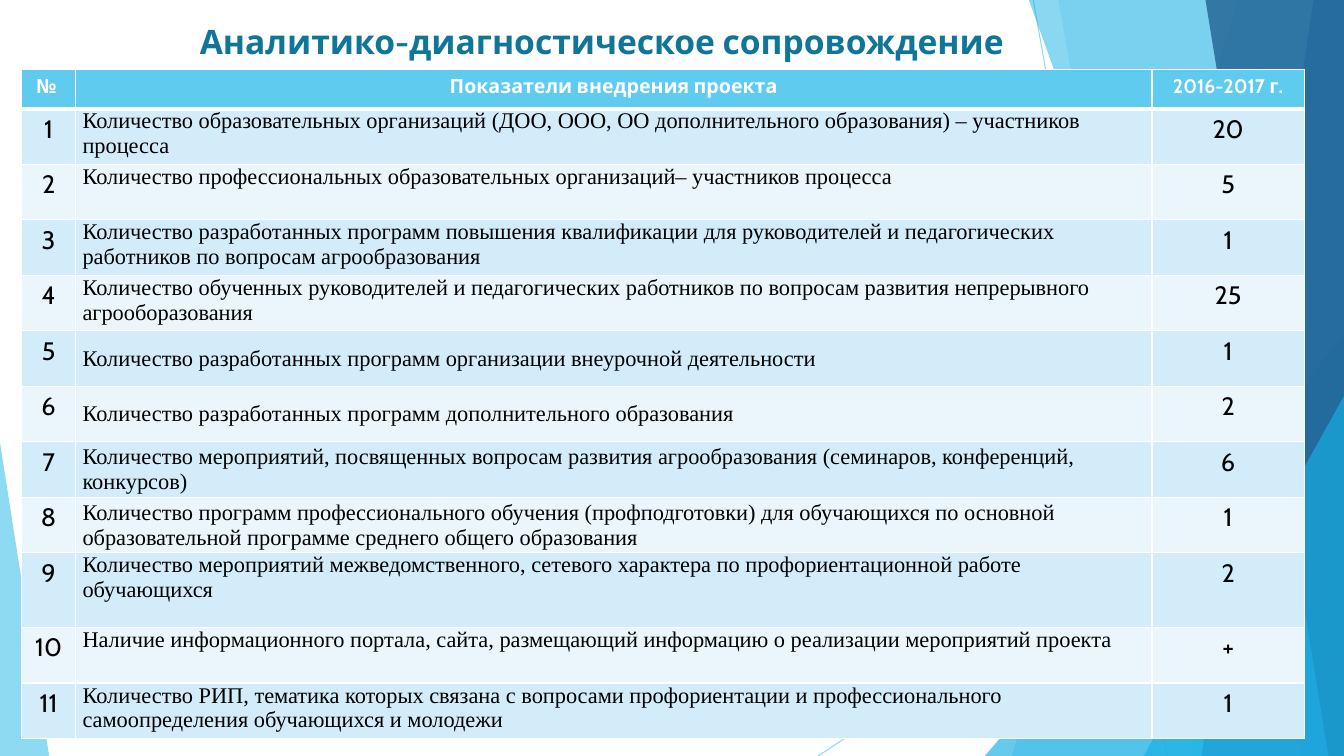
import pptx
import pptx.dml.color
import pptx.enum.dml
import pptx.enum.shapes
import pptx.enum.text
import pptx.oxml
import pptx.oxml.ns
import pptx.util

Cm = pptx.util.Cm
Color = pptx.dml.color.RGBColor
Align = pptx.enum.text.PP_ALIGN
Anchor = pptx.enum.text.MSO_ANCHOR

WHITE = Color(0xFF, 0xFF, 0xFF)
BLACK = Color(0x00, 0x00, 0x00)
SKY = Color(0x5F, 0xCB, 0xEF)
CYAN = Color(0x17, 0xB0, 0xE4)
BLUE = Color(0x2E, 0x83, 0xC3)
NAVY = Color(0x22, 0x62, 0x92)
TEAL = Color(0x0F, 0x76, 0x98)
BAND_DARK = Color(0xD2, 0xEC, 0xF9)
BAND_LIGHT = Color(0xEA, 0xF6, 0xFC)

SLIDE_WIDTH, SLIDE_HEIGHT = 33.87, 19.05
COLUMN_WIDTHS = (1.35, 27.13, 3.84)
HEADER_HEIGHT, ROW_HEIGHT, TALL_ROW_HEIGHT = 0.99, 1.4, 1.88
TALL_ROW = 9
MIDDLE_ROWS = (5, 6, 7, 8)
HEADINGS = ("№ ", "Показатели внедрения проекта", "2016-2017 г.")
INDICATORS = (
    ("Количество образовательных организаций (ДОО, ООО, ОО дополнительного образования) – участников процесса", "20"),
    ("Количество профессиональных образовательных организаций– участников процесса", "5"),
    ("Количество разработанных программ повышения квалификации для руководителей и педагогических "
     "работников по вопросам агрообразования", "1"),
    ("Количество обученных руководителей и педагогических работников по вопросам развития непрерывного "
     "агрооборазования", "25"),
    ("Количество разработанных программ организации внеурочной деятельности", "1"),
    ("Количество разработанных программ дополнительного образования", "2"),
    ("Количество мероприятий, посвященных вопросам развития агрообразования (семинаров, конференций, "
     "конкурсов)", "6"),
    ("Количество программ профессионального обучения (профподготовки) для обучающихся по основной "
     "образовательной программе среднего общего образования", "1"),
    ("Количество мероприятий межведомственного, сетевого характера по профориентационной работе "
     "обучающихся", "2"),
    ("Наличие информационного портала, сайта, размещающий информацию о реализации мероприятий проекта", "+"),
    ("Количество РИП, тематика которых связана с вопросами профориентации и профессионального "
     "самоопределения обучающихся и молодежи", "1"),
)


def write_text(frame, text, size=18, font="Cabin", color=BLACK, bold=False, align=Align.CENTER):
    """Put one formatted paragraph into a text frame."""
    frame.word_wrap = True
    paragraph = frame.paragraphs[0]
    paragraph.alignment = align
    run = paragraph.add_run()
    run.text = text
    run.font.size = pptx.util.Pt(size)
    run.font.name = font
    run.font.color.rgb = color
    run.font.bold = bold


def set_alpha(fill_parent, percent):
    """Make the first solid colour below an element partly transparent."""
    color = next(fill_parent.iter(pptx.oxml.ns.qn("a:srgbClr")))
    alpha = color.makeelement(pptx.oxml.ns.qn("a:alpha"), {"val": str(percent * 1000)})
    color.append(alpha)


def paint(shape, color, opacity):
    """Give a shape a translucent fill without line or shadow."""
    shape.shadow.inherit = False
    shape.fill.solid()
    shape.fill.fore_color.rgb = color
    shape.line.fill.background()
    set_alpha(shape.fill._xPr, opacity)


def add_ray(slide, start, end):
    """Draw a thin translucent decorative line."""
    ends = [Cm(value) for value in (*start, *end)]
    ray = slide.shapes.add_connector(pptx.enum.shapes.MSO_CONNECTOR.STRAIGHT, *ends)
    ray.line.color.rgb = SKY
    ray.line.width = pptx.util.Pt(0.75)
    properties = ray._element.spPr
    set_alpha(properties, 70)
    properties.append(properties.makeelement(pptx.oxml.ns.qn("a:effectLst"), {}))


def add_panel(slide, top_left, bottom_left, color, opacity):
    """Draw a slanted panel reaching the right edge of the slide."""
    builder = slide.shapes.build_freeform(Cm(top_left), 0)
    corners = ((SLIDE_WIDTH, 0), (SLIDE_WIDTH, SLIDE_HEIGHT), (bottom_left, SLIDE_HEIGHT))
    builder.add_line_segments([(Cm(x), Cm(y)) for x, y in corners])
    paint(builder.convert_to_shape(), color, opacity)


def add_corner(slide, left, width, height, apex, color, opacity):
    """Draw a right triangle standing on the bottom edge of the slide."""
    corner = slide.shapes.add_shape(
        pptx.enum.shapes.MSO_SHAPE.ISOSCELES_TRIANGLE,
        Cm(left), Cm(SLIDE_HEIGHT - height), Cm(width), Cm(height))
    corner.adjustments[0] = apex
    paint(corner, color, opacity)


def add_background(slide):
    """Draw the faceted decoration from back to front."""
    add_ray(slide, (26.04, 0), (29.41, SLIDE_HEIGHT))
    add_ray(slide, (SLIDE_WIDTH, 10.24), (20.62, SLIDE_HEIGHT))
    add_panel(slide, 31.19, 25.5, SKY, 36)
    add_panel(slide, 26.67, 30.05, SKY, 20)
    add_corner(slide, 24.82, 9.05, 10.59, 1, CYAN, 66)
    add_panel(slide, 25.93, 32.79, CYAN, 50)
    add_panel(slide, 33.1, 30.28, BLUE, 70)
    add_panel(slide, 30.38, 33.48, NAVY, 80)
    add_corner(slide, 28.82, 5.05, 9.07, 1, CYAN, 66)
    add_corner(slide, 0, 1.24, 7.9, 0, SKY, 70)


def add_title(slide, left, top, width, height):
    """Place the centred slide title."""
    title = slide.shapes.add_textbox(Cm(left), Cm(top), Cm(width), Cm(height))
    write_text(title.text_frame, "Аналитико-диагностическое сопровождение ", size=24, color=TEAL, bold=True)


def style_cell(cell, color, top=1, bottom=1):
    """Set white borders, in points, and the fill of a cell."""
    properties = cell._tc.get_or_add_tcPr()
    for side, width in (("L", 1), ("R", 1), ("T", top), ("B", bottom)):
        properties.append(pptx.oxml.parse_xml(
            f'<a:ln{side} {pptx.oxml.ns.nsdecls("a")} w="{width * 12700}"><a:solidFill>'
            f'<a:srgbClr val="{WHITE}"/></a:solidFill></a:ln{side}>'))
    cell.fill.solid()
    cell.fill.fore_color.rgb = color


def add_indicator_table(slide, left, top):
    """Build the table of project indicators."""
    heights = [HEADER_HEIGHT] + [ROW_HEIGHT] * len(INDICATORS)
    heights[TALL_ROW] = TALL_ROW_HEIGHT
    table = slide.shapes.add_table(
        len(heights), len(COLUMN_WIDTHS), Cm(left), Cm(top),
        Cm(sum(COLUMN_WIDTHS)), Cm(sum(heights))).table
    table.horz_banding = False
    for column, width in zip(table.columns, COLUMN_WIDTHS):
        column.width = Cm(width)
    for row, height in zip(table.rows, heights):
        row.height = Cm(height)
    for cell, heading in zip(table.rows[0].cells, HEADINGS):
        style_cell(cell, SKY, bottom=3)
        write_text(cell.text_frame, heading, size=14, color=WHITE, bold=True)
    for number, (indicator, value) in enumerate(INDICATORS, 1):
        number_cell, indicator_cell, value_cell = table.rows[number].cells
        for cell in (number_cell, indicator_cell, value_cell):
            style_cell(cell, BAND_DARK if number % 2 else BAND_LIGHT, top=3 if number == 1 else 1)
        indicator_cell.margin_left = indicator_cell.margin_right = Cm(0.18)
        indicator_cell.margin_top = indicator_cell.margin_bottom = 0
        indicator_cell.vertical_anchor = Anchor.MIDDLE if number in MIDDLE_ROWS else Anchor.TOP
        write_text(number_cell.text_frame, str(number))
        write_text(indicator_cell.text_frame, indicator, size=16, font="Times New Roman", align=Align.LEFT)
        write_text(value_cell.text_frame, value)


def main():
    """Build and save the presentation."""
    presentation = pptx.Presentation()
    presentation.slide_width = Cm(SLIDE_WIDTH)
    presentation.slide_height = Cm(SLIDE_HEIGHT)
    slide = presentation.slides.add_slide(presentation.slide_layouts[6])
    add_background(slide)
    add_title(slide, 1.04, 0.41, 28.45, 1.75)
    add_indicator_table(slide, 0.55, 1.75)
    presentation.save("out.pptx")


if __name__ == "__main__":
    main()
